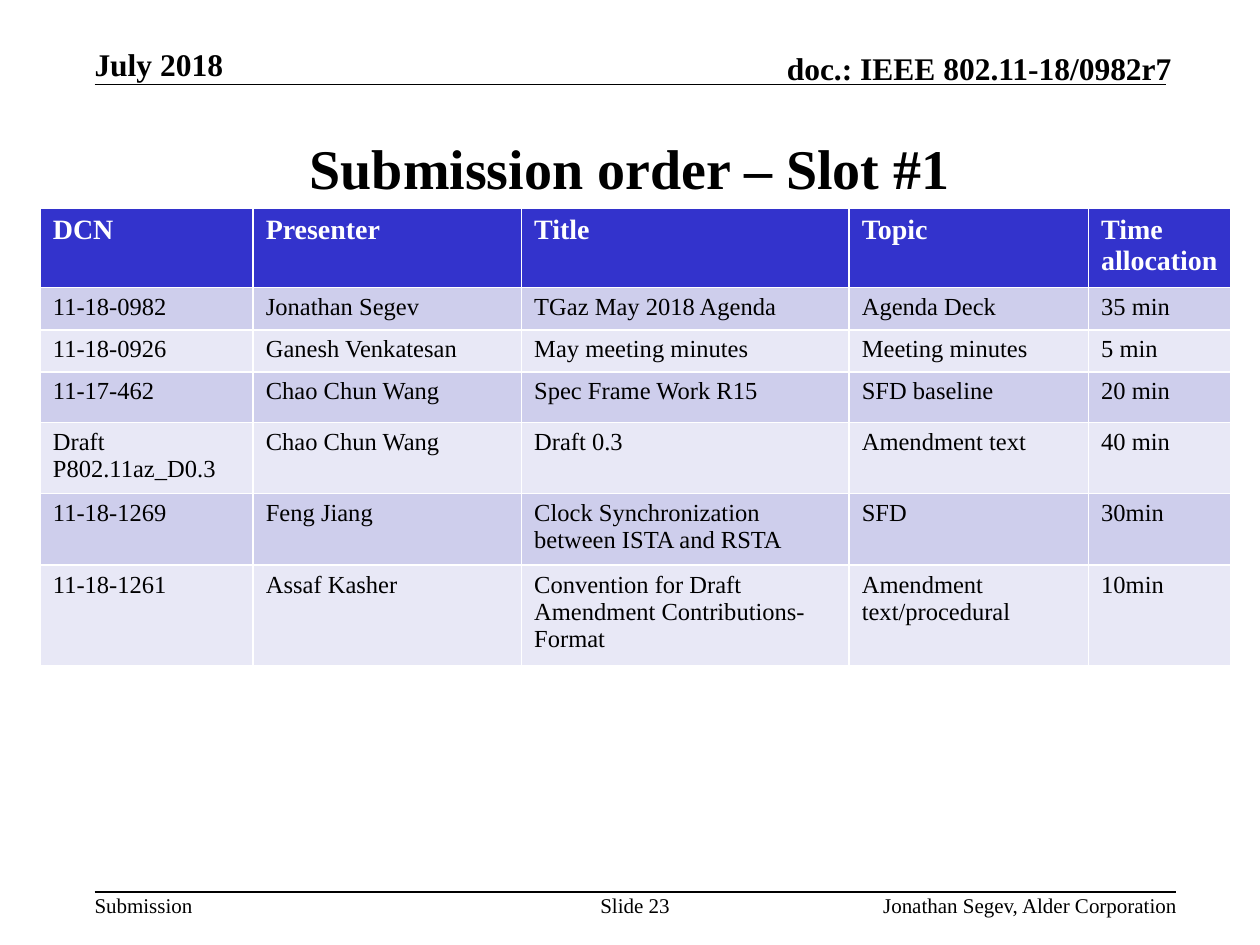
from lxml import etree
from pptx import Presentation
from pptx.dml.color import RGBColor
from pptx.enum.shapes import MSO_CONNECTOR
from pptx.enum.text import MSO_ANCHOR, PP_ALIGN
from pptx.oxml.ns import qn
from pptx.util import Inches, Pt

STRAIGHT = MSO_CONNECTOR.STRAIGHT
TOP, MIDDLE, BOTTOM = MSO_ANCHOR.TOP, MSO_ANCHOR.MIDDLE, MSO_ANCHOR.BOTTOM
LEFT, CENTER, RIGHT = PP_ALIGN.LEFT, PP_ALIGN.CENTER, PP_ALIGN.RIGHT

BLACK = RGBColor(0x00, 0x00, 0x00)
WHITE = RGBColor(0xFF, 0xFF, 0xFF)
HEADER_BLUE = RGBColor(0x33, 0x33, 0xCC)
BANDS = (RGBColor(0xCE, 0xCE, 0xEC), RGBColor(0xE8, 0xE8, 0xF6))

# The slide is a grid of 100 columns by 75 rows
SLIDE_WIDTH, SLIDE_HEIGHT = Inches(10), Inches(7.5)
COLUMN, ROW = SLIDE_WIDTH // 100, SLIDE_HEIGHT // 75
MARGIN = 7.5
HEADER_RULE, FOOTER_RULE = 6.7, 70.8

BODY_FONT = {"name": "Times New Roman", "size": Pt(14), "bold": False}
TABLE_HEAD_FONT = BODY_FONT | {"size": Pt(16), "bold": True}
TITLE_FONT = BODY_FONT | {"size": Pt(32), "bold": True}
HEADER_FONT = BODY_FONT | {"size": Pt(18), "bold": True}
FOOTER_FONT = BODY_FONT | {"size": Pt(12)}

TABLE_COLUMNS = (16.9, 21.3, 26, 19, 11.3)
TABLE_ROWS = (3.3, 3.3, 3.3, 4, 4, 4, 4)
SUBMISSIONS = (
    ("DCN", "Presenter", "Title", "Topic", "Time allocation"),
    ("11-18-0982", "Jonathan Segev", "TGaz May 2018 Agenda", "Agenda Deck", "35 min"),
    ("11-18-0926", "Ganesh Venkatesan", "May meeting minutes", "Meeting minutes", "5 min"),
    ("11-17-462", "Chao Chun Wang", "Spec Frame Work R15", "SFD baseline", "20 min"),
    ("Draft P802.11az_D0.3", "Chao Chun Wang", "Draft 0.3", "Amendment text", "40 min"),
    ("11-18-1269", "Feng Jiang", "Clock Synchronization between ISTA and RSTA", "SFD", "30min"),
    ("11-18-1261", "Assaf Kasher", "Convention for Draft Amendment Contributions-Format",
     "Amendment text/procedural", "10min"),
)


def grid(left, top, width, height):
    """Turn grid columns and rows into slide lengths."""
    return [round(n * unit) for n, unit in
            zip((left, top, width, height), (COLUMN, ROW, COLUMN, ROW))]


def write(text_frame, text, font_format, color=BLACK, align=LEFT):
    paragraph = text_frame.paragraphs[0]
    paragraph.alignment = align
    run = paragraph.add_run()
    run.text = text
    for name, value in font_format.items():
        setattr(run.font, name, value)
    run.font.color.rgb = color


def add_text(slide, place, text, font_format, align=LEFT, anchor=TOP, wrap=True):
    """Add a text box without inner margins."""
    text_frame = slide.shapes.add_textbox(*grid(*place)).text_frame
    frame_format = {"word_wrap": wrap, "vertical_anchor": anchor}
    frame_format |= dict.fromkeys(
        ("margin_left", "margin_top", "margin_right", "margin_bottom"), 0)
    for name, value in frame_format.items():
        setattr(text_frame, name, value)
    write(text_frame, text, font_format, align=align)


def add_rule(slide, row, right):
    """Draw a horizontal line from the left margin."""
    begin_x, y, end_x, _ = grid(MARGIN, row, right, row)
    rule = slide.shapes.add_connector(STRAIGHT, begin_x, y, end_x, y)
    rule.line.color.rgb = BLACK
    rule.line.width = Pt(1)
    etree.SubElement(rule.element.spPr, qn("a:effectLst"))


def add_submission_table(slide):
    place = grid(3.2, 16.5, sum(TABLE_COLUMNS), sum(TABLE_ROWS))
    table = slide.shapes.add_table(len(TABLE_ROWS), len(TABLE_COLUMNS), *place).table
    for column, width in zip(table.columns, TABLE_COLUMNS):
        column.width = round(width * COLUMN)
    for index, (row, height, texts) in enumerate(zip(table.rows, TABLE_ROWS, SUBMISSIONS)):
        row.height = round(height * ROW)
        if index == 0:
            fill, font_format, color = HEADER_BLUE, TABLE_HEAD_FONT, WHITE
        else:
            fill, font_format, color = BANDS[(index - 1) % 2], BODY_FONT, BLACK
        for cell, text in zip(row.cells, texts):
            cell.fill.solid()
            cell.fill.fore_color.rgb = fill
            write(cell.text_frame, text, font_format, color)


def main():
    presentation = Presentation()
    presentation.slide_width, presentation.slide_height = SLIDE_WIDTH, SLIDE_HEIGHT
    slide = presentation.slides.add_slide(presentation.slide_layouts[6])

    add_rule(slide, HEADER_RULE, 92.5)
    add_rule(slide, FOOTER_RULE, 93.3)
    add_text(slide, (MARGIN, 3.6, 20.5, 3), "July 2018", HEADER_FONT, anchor=BOTTOM)
    add_text(slide, (54.7, 3.9, 38.3, 3), "doc.: IEEE 802.11-18/0982r7",
             HEADER_FONT, RIGHT, BOTTOM)
    add_text(slide, (MARGIN, 7.5, 85, 11.6), "Submission order – Slot #1",
             TITLE_FONT, CENTER, MIDDLE)
    add_submission_table(slide)
    add_text(slide, (MARGIN, FOOTER_RULE, 7.8, 2), "Submission", FOOTER_FONT, wrap=False)
    add_text(slide, (47.5, FOOTER_RULE, 5.8, 4), "Slide 23", FOOTER_FONT, CENTER)
    add_text(slide, (58.6, FOOTER_RULE, 34.8, 2), "Jonathan Segev, Alder Corporation",
             FOOTER_FONT, RIGHT)

    presentation.save("out.pptx")


if __name__ == "__main__":
    main()
